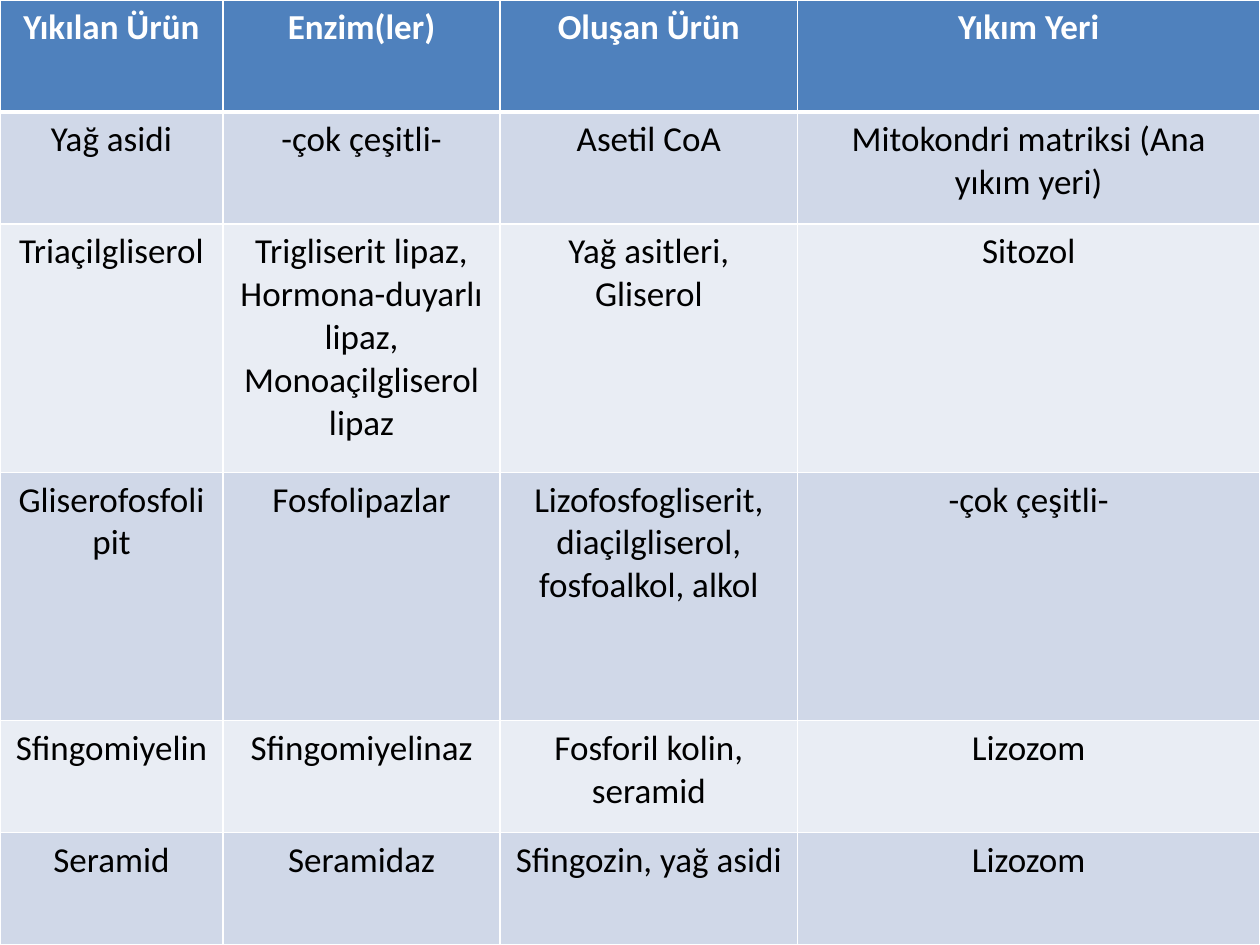
from lxml.etree import SubElement
from pptx import Presentation
from pptx.dml.color import RGBColor
from pptx.enum.text import PP_ALIGN as Align
from pptx.oxml.ns import qn
from pptx.util import Inches, Pt

COLORS = {
    "header": "4F81BD",
    "odd_row": "D0D8E8",
    "even_row": "E9EDF4",
    "border": "FFFFFF",
    "header_text": "FFFFFF",
    "body_text": "000000",
}

COLUMN_WIDTHS = [1.77, 2.2, 2.36, 3.67]
SHORT, TALL = 0.89, 1.97
ROW_HEIGHTS = [SHORT, SHORT, TALL, TALL, SHORT, SHORT]

# A line break inside a cell starts a new paragraph
BREAKDOWN = [
    ["Yıkılan Ürün", "Enzim(ler)", "Oluşan Ürün", "Yıkım Yeri"],
    ["Yağ asidi", "-çok çeşitli-", "Asetil CoA", "Mitokondri matriksi (Ana yıkım yeri)"],
    ["Triaçilgliserol",
     "Trigliserit lipaz,\nHormona-duyarlı lipaz, Monoaçilgliserol lipaz",
     "Yağ asitleri,\nGliserol", "Sitozol"],
    ["Gliserofosfolipit", "Fosfolipazlar",
     "Lizofosfogliserit, diaçilgliserol, fosfoalkol, alkol", "-çok çeşitli-"],
    ["Sfingomiyelin", "Sfingomiyelinaz", "Fosforil kolin, seramid", "Lizozom"],
    ["Seramid", "Seramidaz", "Sfingozin, yağ asidi", "Lizozom"],
]


class TableSlide:
    font = "Calibri"
    size = Pt(20)
    thin, thick = Pt(1), Pt(3)

    def __init__(self, slide):
        self.slide = slide

    def table(self, rows, widths, heights):
        frame = self.slide.shapes.add_table(
            len(rows), len(widths), Inches(0), Inches(0),
            Inches(sum(widths)), Inches(sum(heights)))
        table = frame.table
        for column, width in zip(table.columns, widths):
            column.width = Inches(width)
        for row, height in zip(table.rows, heights):
            row.height = Inches(height)
        for r, texts in enumerate(rows):
            for c, text in enumerate(texts):
                self.cell(table.cell(r, c), text, r)

    def cell(self, cell, text, row):
        is_header = row == 0
        # The rule below the header is shared with the first body row
        self.borders(cell,
                     top=self.thick if row == 1 else self.thin,
                     bottom=self.thick if is_header else self.thin)
        fill = "header" if is_header else "odd_row" if row % 2 else "even_row"
        cell.fill.solid()
        cell.fill.fore_color.rgb = RGBColor.from_string(COLORS[fill])

        frame = cell.text_frame
        for i, line in enumerate(text.split("\n")):
            paragraph = frame.add_paragraph() if i else frame.paragraphs[0]
            paragraph.alignment = Align.CENTER
            run = paragraph.add_run()
            run.text = line
            run.font.name = self.font
            run.font.size = self.size
            run.font.bold = is_header
            ink = "header_text" if is_header else "body_text"
            run.font.color.rgb = RGBColor.from_string(COLORS[ink])

    def borders(self, cell, top, bottom):
        properties = cell._tc.get_or_add_tcPr()
        edges = {"a:lnL": self.thin, "a:lnR": self.thin, "a:lnT": top, "a:lnB": bottom}
        for tag, width in edges.items():
            line = SubElement(properties, qn(tag), w=str(int(width)))
            solid = SubElement(line, qn("a:solidFill"))
            SubElement(solid, qn("a:srgbClr"), val=COLORS["border"])


def main():
    deck = Presentation()
    deck.slide_width, deck.slide_height = Inches(10), Inches(7.5)
    blank_layout = deck.slide_layouts[6]

    # Lipid breakdown table fills the slide
    page = TableSlide(deck.slides.add_slide(blank_layout))
    page.table(BREAKDOWN, COLUMN_WIDTHS, ROW_HEIGHTS)
    deck.save("out.pptx")


if __name__ == "__main__":
    main()
